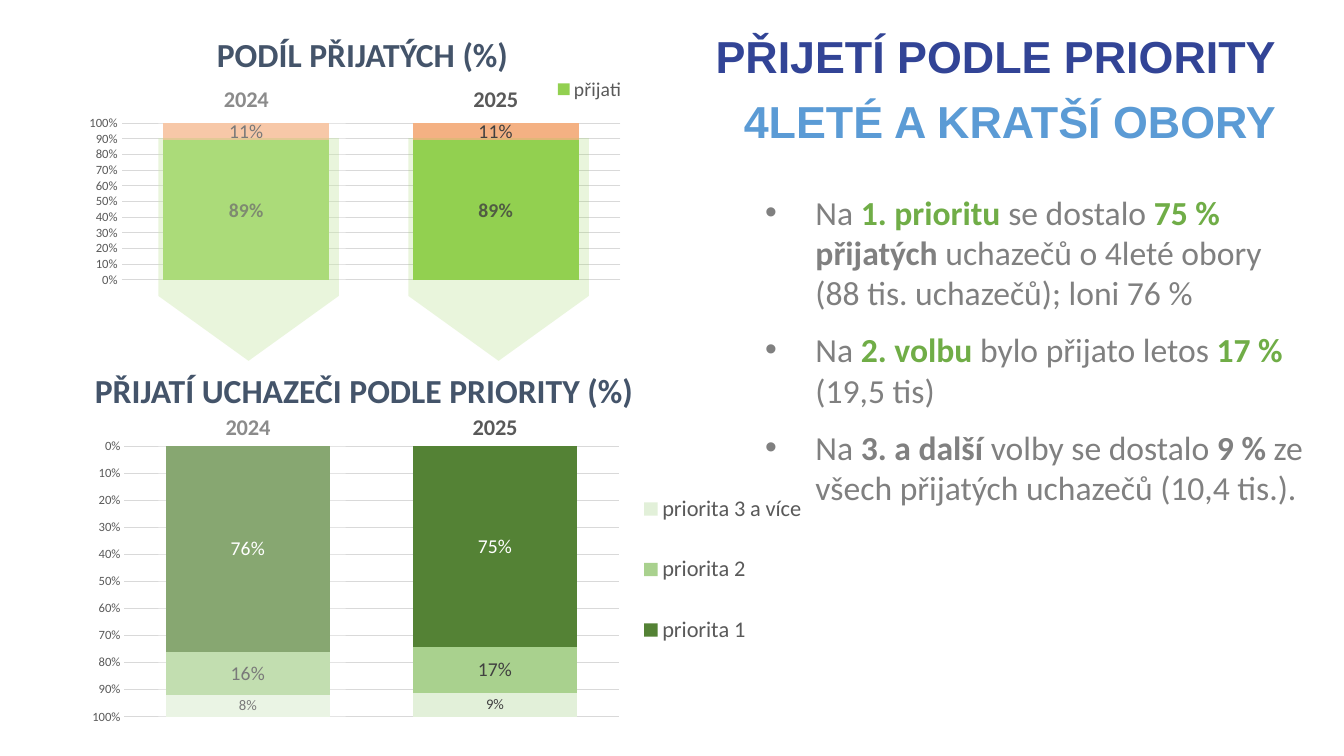
from dataclasses import dataclass

from lxml.etree import SubElement
from pptx import Presentation
from pptx.chart.data import CategoryChartData as ChartData
from pptx.dml.color import RGBColor as RGB
from pptx.enum.chart import XL_CHART_TYPE as Kind
from pptx.enum.chart import XL_LABEL_POSITION as Spot
from pptx.enum.chart import XL_LEGEND_POSITION as Side
from pptx.enum.chart import XL_TICK_LABEL_POSITION as Tick
from pptx.enum.chart import XL_TICK_MARK as Mark
from pptx.enum.shapes import MSO_SHAPE as Shape
from pptx.enum.text import MSO_ANCHOR as Anchor
from pptx.enum.text import MSO_AUTO_SIZE as Fit
from pptx.enum.text import PP_ALIGN as Align
from pptx.oxml import parse_xml
from pptx.oxml.ns import nsdecls, qn
from pptx.util import Inches, Pt


@dataclass(frozen=True)
class Theme:
    head: str = "Arial"
    body: str = "Calibri"
    navy: str = "324496"
    blue: str = "5B9BD5"
    slate: str = "44546A"
    gray: str = "808080"
    green: str = "70AD47"
    axis: str = "595959"
    dark: str = "404040"
    grid: str = "D9D9D9"
    lime: str = "92D050"
    peach: str = "F4B183"
    deep: str = "548235"
    mid: str = "A9D18E"
    pale: str = "E2F0D9"
    white: str = "FFFFFF"
    title: float = 32
    text: float = 24
    years: float = 16
    label: float = 14
    small: float = 10.5
    scale: float = 9


T = Theme()

TITLE = [("PŘIJETÍ PODLE PRIORITY", T.navy), ("4LETÉ A KRATŠÍ OBORY", T.blue)]
HEADS = [
    ("PODÍL PŘIJATÝCH (%)", (0.5, 0.26, 6.19, 0.55)),
    ("PŘIJATÍ UCHAZEČI PODLE PRIORITY (%)", (0.36, 3.59, 6.5, 0.55)),
]
POINTS = [
    [("Na ", T.gray, False), ("1. prioritu ", T.green, True),
     ("se dostalo ", T.gray, False), ("75 %", T.green, True),
     (" přijatých ", T.gray, True),
     ("uchazečů o 4leté obory (88 tis. uchazečů); loni 76 %", T.gray, False)],
    [("Na ", T.gray, False), ("2. volbu ", T.green, True),
     ("bylo přijato letos ", T.gray, False), ("17 % ", T.green, True),
     ("(19,5 tis)", T.gray, False)],
    [("Na ", T.gray, False), ("3. a další ", T.gray, True),
     ("volby se dostalo ", T.gray, False), ("9 % ", T.gray, True),
     ("ze všech přijatých uchazečů (10,4 tis.).", T.gray, False)],
]
YEARS = ["2024", "2025"]
CHARTS = [
    dict(box=(0.03, 3.36, 8.6, 3.95), plot=(0.14, 0.27, 0.57, 0.68),
         key=(0.72, 0.31, 0.22, 0.54), side=Side.RIGHT, size=T.years,
         flip=True, hide=None, rows=[
             ("priorita 1", (0.76, 0.75), T.deep, T.white, T.label, False),
             ("priorita 2", (0.16, 0.17), T.mid, T.dark, T.label, False),
             ("priorita 3 a více", (0.08, 0.09), T.pale, T.dark, T.small, False)]),
    dict(box=(0.35, 0.62, 6.11, 2.32), plot=(0.14, 0.26, 0.81, 0.67),
         key=(0.82, 0.05, 0.16, 0.13), side=Side.BOTTOM, size=T.label,
         flip=False, hide=1, rows=[
             ("přijati", (0.89, 0.89), T.lime, T.dark, T.label, True),
             ("nepřijati", (0.11, 0.11), T.peach, T.dark, T.label, False)]),
]
VEIL = (1.57, 0.8, 1.86, 6.49)
ARROWS = [(left, 1.37, 1.79, 2.21) for left in (1.57, 4.05)]


def place(box):
    return [Inches(v) for v in box]


def style(font, size, color, bold=False, face=T.body):
    font.size, font.bold, font.name = Pt(size), bold, face
    font.color.rgb = RGB.from_string(color)


def write(para, text, *look):
    run = para.add_run()
    run.text = text
    style(run.font, *look)


def paras(frame, count):
    return [frame.paragraphs[0]] + [frame.add_paragraph() for _ in range(count - 1)]


def layout(box, inner=False):
    tags = '<c:layoutTarget val="inner"/>' if inner else ""
    tags += '<c:xMode val="edge"/><c:yMode val="edge"/>'
    tags += "".join(f'<c:{k} val="{v}"/>' for k, v in zip("xywh", box))
    return parse_xml(f'<c:layout {nsdecls("c")}><c:manualLayout>{tags}'
                     '</c:manualLayout></c:layout>')


def fix(node, spot, item):
    for old in node.findall(qn("c:layout")):
        node.remove(old)
    node.insert(spot, item)


def outline(line):
    line.color.rgb = RGB.from_string(T.grid)
    line.width = Pt(0.75)


def draw_chart(slide, box, plot, key, side, size, flip, hide, rows):
    data = ChartData(number_format="0%")
    data.categories = YEARS
    for row in rows:
        data.add_series(row[0], row[1])
    chart = slide.shapes.add_chart(Kind.COLUMN_STACKED_100, *place(box), data).chart
    chart.has_title = False
    chart.font.name, chart.font.size = T.body, Pt(10)
    bars = chart.plots[0]
    bars.gap_width, bars.overlap, bars.vary_by_categories = 50, 100, False
    for ser, (_, _, fill, ink, pts, bold) in zip(bars.series, rows):
        ser.format.fill.solid()
        ser.format.fill.fore_color.rgb = RGB.from_string(fill)
        tags = ser.data_labels
        tags.show_value, tags.position = True, Spot.CENTER
        tags.number_format, tags.number_format_is_linked = "0%", False
        style(tags.font, pts, ink, bold)

    cat, val = chart.category_axis, chart.value_axis
    for axis in (cat, val):
        axis.major_tick_mark = axis.minor_tick_mark = Mark.NONE
    style(cat.tick_labels.font, T.years, T.axis, True)
    cat.tick_label_position = Tick.NEXT_TO_AXIS if flip else Tick.HIGH
    outline(cat.format.line)
    style(val.tick_labels.font, T.scale, T.axis)
    val.tick_labels.number_format = "0%"
    val.tick_labels.number_format_is_linked = False
    val.minimum_scale, val.maximum_scale, val.major_unit = 0, 1, 0.1
    val.reverse_order = flip
    val.format.line.fill.background()
    val.has_major_gridlines = True
    outline(val.major_gridlines.format.line)

    chart.has_legend = True
    legend = chart.legend
    legend.position, legend.include_in_layout = side, False
    style(legend.font, size, T.axis)
    fix(legend._element, 1, layout(key))
    if hide is not None:
        legend._element.insert(1, parse_xml(
            f'<c:legendEntry {nsdecls("c")}><c:idx val="{hide}"/>'
            '<c:delete val="1"/></c:legendEntry>'))
    fix(chart._chartSpace.chart.plotArea, 0, layout(plot, True))


def tint(slide, kind, box, color, alpha):
    shape = slide.shapes.add_shape(kind, *place(box))
    shape.shadow.inherit = False
    shape.line.fill.background()
    shape.fill.solid()
    shape.fill.fore_color.rgb = RGB.from_string(color)
    tone = next(shape._element.spPr.iter(qn("a:srgbClr")))
    SubElement(tone, qn("a:alpha"), val=str(alpha * 1000))
    return shape


def draw_title(slide):
    title = slide.shapes.title
    title.left, title.top, title.width, title.height = place((0.55, 0.21, 12.21, 1.27))
    frame = title.text_frame
    frame.word_wrap, frame.auto_size = True, Fit.NONE
    frame.vertical_anchor = Anchor.TOP
    for para, (text, color) in zip(paras(frame, len(TITLE)), TITLE):
        para.alignment, para.line_spacing = Align.RIGHT, 1.05
        para.space_before, para.space_after = Pt(0), Pt(6)
        write(para, text, T.title, color, True, T.head)


def draw_points(slide):
    frame = slide.shapes.add_textbox(*place((7.49, 1.85, 5.6, 3.26))).text_frame
    frame.word_wrap = True
    for num, (para, runs) in enumerate(zip(paras(frame, len(POINTS)), POINTS)):
        props = para._p.get_or_add_pPr()
        props.set("marL", str(Inches(0.5)))
        props.set("indent", str(-Inches(0.5)))
        SubElement(props, qn("a:buFont"), typeface=T.head)
        SubElement(props, qn("a:buChar"), char="•")
        para.space_before = Pt(12 if num else 0)
        for text, color, bold in runs:
            write(para, text, T.text, color, bold)


def draw_head(slide, text, box):
    frame = slide.shapes.add_textbox(*place(box)).text_frame
    frame.word_wrap, frame.vertical_anchor = True, Anchor.MIDDLE
    para = frame.paragraphs[0]
    para.alignment = Align.CENTER
    write(para, text, T.text, T.slate, True)


def main():
    deck = Presentation()
    deck.slide_width, deck.slide_height = Inches(13.33), Inches(7.5)
    slide = deck.slides.add_slide(deck.slide_layouts[5])
    draw_title(slide)
    draw_points(slide)
    for spec_row in CHARTS:
        draw_chart(slide, **spec_row)
    tint(slide, Shape.RECTANGLE, VEIL, T.white, 30)
    for box in ARROWS:
        arrow = tint(slide, Shape.DOWN_ARROW, box, T.lime, 20)
        arrow.adjustments[0], arrow.adjustments[1] = 1, 0.36
    for text, box in HEADS:
        draw_head(slide, text, box)
    deck.save("out.pptx")


if __name__ == "__main__":
    main()
